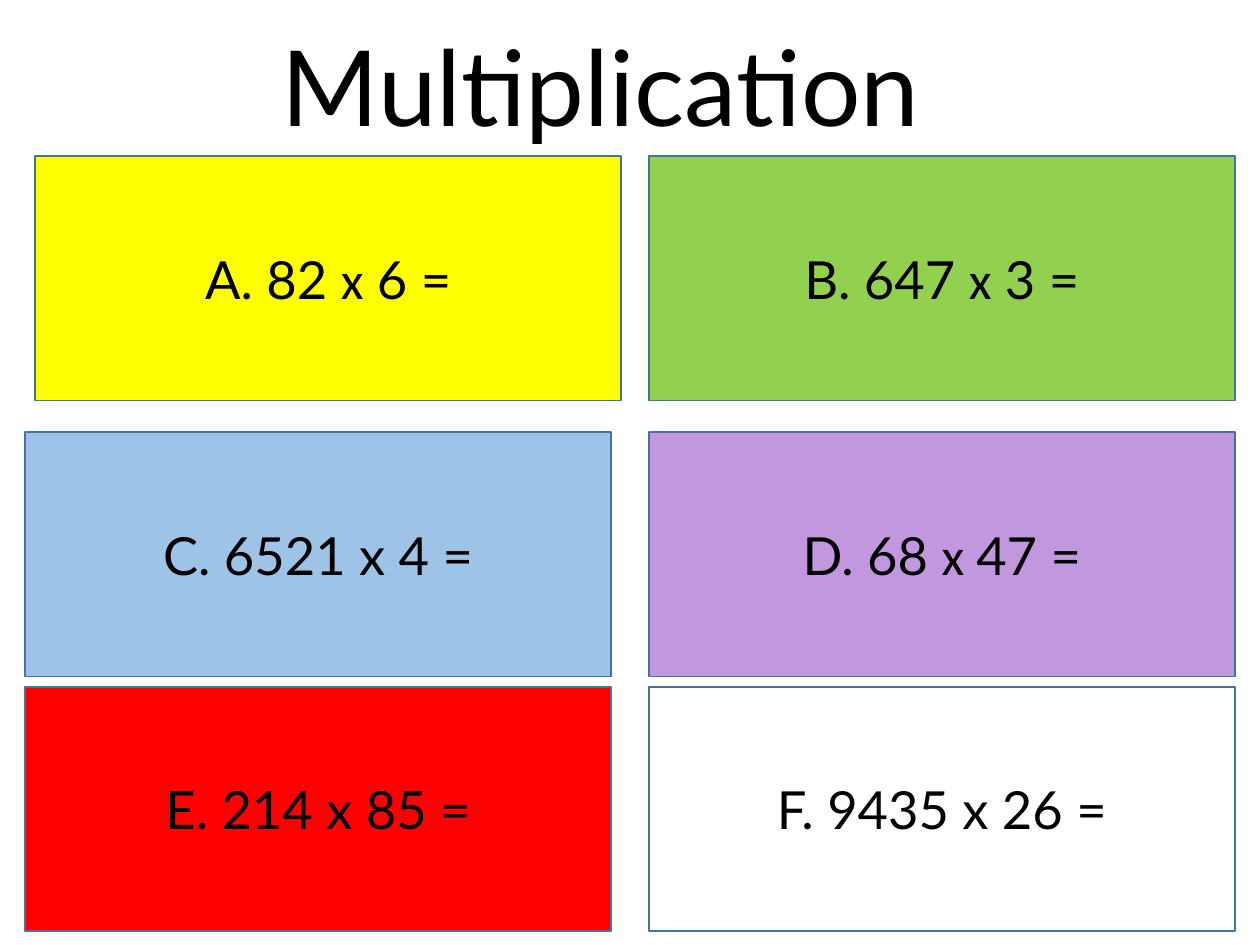
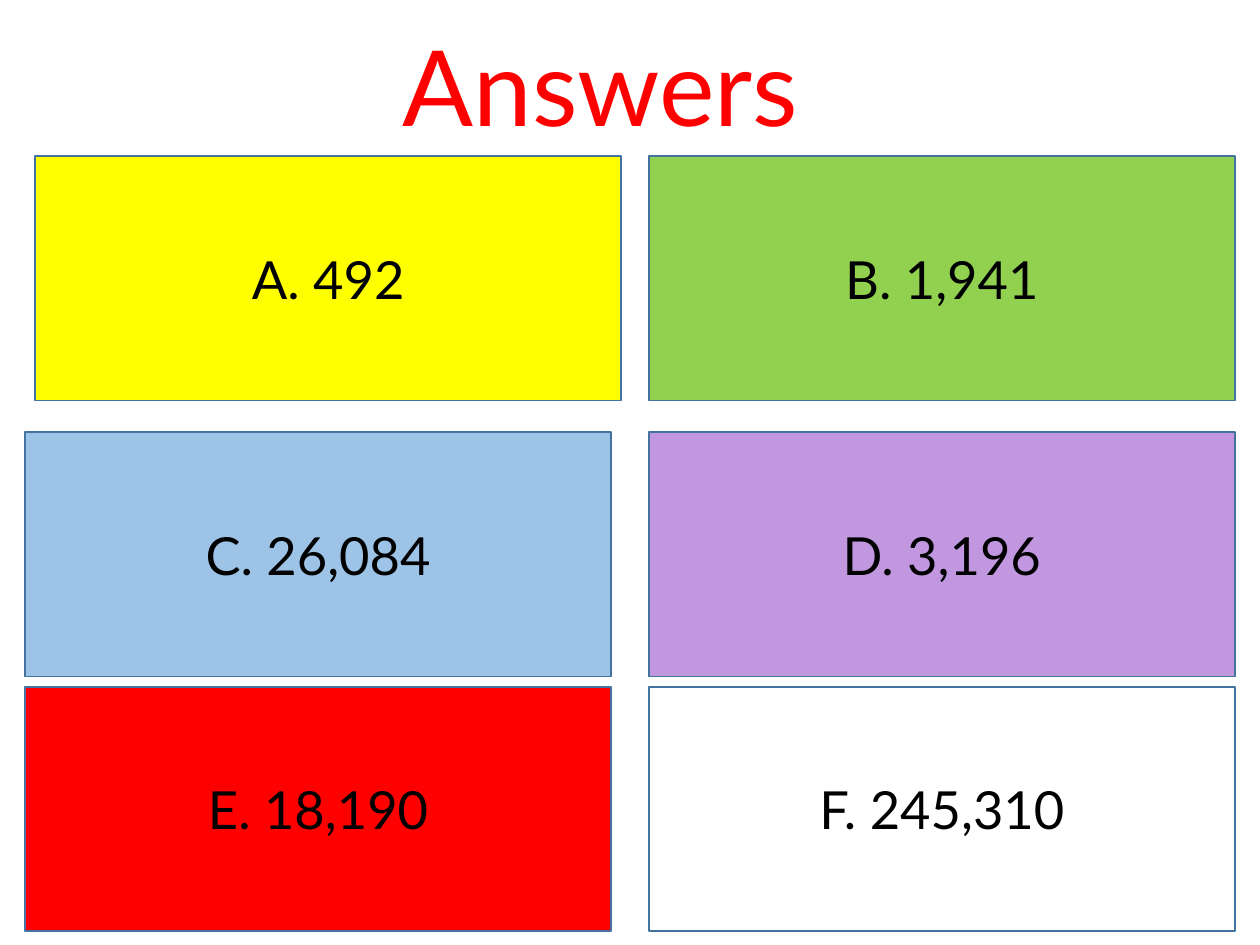
from dataclasses import dataclass

from pptx import Presentation
from pptx.dml.color import RGBColor as RGB
from pptx.enum.shapes import MSO_SHAPE as Shape
from pptx.enum.text import MSO_ANCHOR as Anchor, MSO_AUTO_SIZE as AutoSize, PP_ALIGN as Align
from pptx.util import Inches, Pt


@dataclass(frozen=True)
class Theme:
    font: str = "Lato"
    times_font: str = "Calibri"
    title_size: int = 60
    card_size: int = 30
    black: str = "000000"
    red: str = "FF0000"
    outline: str = "43739E"
    cards: tuple = ("FFFF00", "92D050", "9DC3E6", "C198E0", "FF0000", None)


theme = Theme()

# Grid: two columns of three cards; the first card sits slightly to the right
COLUMNS = (0.2, 5.15)
ROWS = (1.24, 3.43, 5.45)
CARD_WIDTH, CARD_HEIGHT = 4.65, 1.94
FIRST_CARD_SHIFT = 0.08

# Each card is split into spans; every second span is set in the times font
SLIDES = [
    ("Multiplication", theme.black, [
        ("A. 82 ", "x", " 6 ="),
        ("B. 647 ", "x", " 3 ="),
        ("C. 6521 x 4 =",),
        ("D. 68 ", "x ", "47 ="),
        ("E. 214 x 85 =",),
        ("F. 9435 x 26 =",),
    ]),
    ("Answers", theme.red, [
        ("A. 492",), ("B. 1,941",), ("C. 26,084",),
        ("D. 3,196",), ("E. 18,190",), ("F. 245,310",),
    ]),
]


def write(box, spans, size, color):
    para = box.text_frame.paragraphs[0]
    para.alignment = Align.CENTER
    for index, text in enumerate(spans):
        span = para.add_run()
        span.text = text
        span.font.name = theme.times_font if index % 2 else theme.font
        span.font.size = Pt(size)
        span.font.color.rgb = RGB.from_string(color)


deck = Presentation()
deck.slide_width, deck.slide_height = Inches(10), Inches(7.5)

for title, title_color, cards in SLIDES:
    page = deck.slides.add_slide(deck.slide_layouts[6])

    # Cards
    for index, (spans, fill) in enumerate(zip(cards, theme.cards)):
        row, column = divmod(index, len(COLUMNS))
        left = COLUMNS[column] + (FIRST_CARD_SHIFT if index == 0 else 0)
        card = page.shapes.add_shape(
            Shape.RECTANGLE, Inches(left), Inches(ROWS[row]),
            Inches(CARD_WIDTH), Inches(CARD_HEIGHT))
        card.shadow.inherit = False
        if fill:
            card.fill.solid()
            card.fill.fore_color.rgb = RGB.from_string(fill)
        else:
            card.fill.background()
        card.line.color.rgb = RGB.from_string(theme.outline)
        card.line.width = Pt(1)
        card.text_frame.vertical_anchor = Anchor.MIDDLE
        write(card, spans, theme.card_size, theme.black)

    # Title
    heading = page.shapes.add_textbox(
        Inches(1.29), Inches(0.12), Inches(6.95), Inches(1.11))
    heading.text_frame.word_wrap = True
    heading.text_frame.auto_size = AutoSize.SHAPE_TO_FIT_TEXT
    write(heading, (title,), theme.title_size, title_color)

deck.save("out.pptx")
